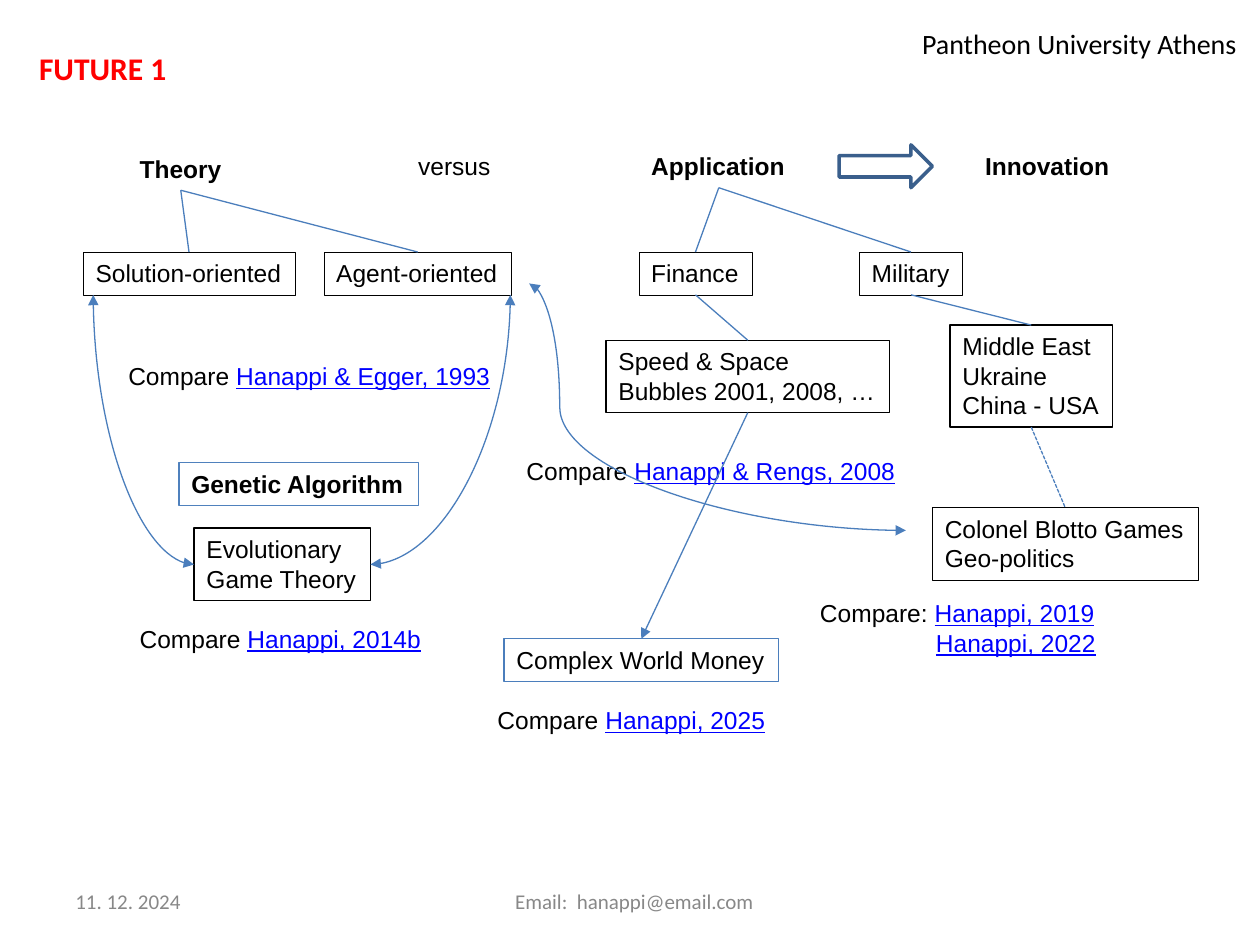
from lxml import etree
from pptx import Presentation
from pptx.dml.color import RGBColor
from pptx.enum.dml import MSO_LINE
from pptx.enum.shapes import MSO_CONNECTOR, MSO_SHAPE
from pptx.enum.text import MSO_ANCHOR, MSO_AUTO_SIZE, PP_ALIGN
from pptx.oxml.ns import qn
from pptx.util import Inches, Pt

STRAIGHT, CURVE = MSO_CONNECTOR.STRAIGHT, MSO_CONNECTOR.CURVE
TOP_SITE, BOTTOM_SITE = 0, 2
COLORS = {"text": "000000", "title": "FF0000", "link": "0000FF", "footer": "888888",
          "line": "4B7EBC", "genetic": "4F81BD", "arrow": "3A5F8C", "white": "FFFFFF"}

# Content: name -> (left, top, width, lines, bold, border color, border width)
NODES = {
    "theory": (1.01, 1.17, 0.85, ["Theory"], True, None, 0),
    "versus": (3.22, 1.15, 0.78, ["versus"], False, None, 0),
    "application": (5.07, 1.15, 1.27, ["Application"], True, None, 0),
    "innovation": (7.72, 1.15, 1.19, ["Innovation"], True, None, 0),
    "solution": (0.66, 2, 1.68, ["Solution-oriented"], False, "text", 0.25),
    "agent": (2.57, 2, 1.49, ["Agent-oriented"], False, "text", 0.25),
    "finance": (5.07, 2, 0.9, ["Finance"], False, "text", 0.25),
    "military": (6.82, 2, 0.82, ["Military"], False, "text", 0.25),
    "bubbles": (4.81, 2.7, 2.25, ["Speed & Space", "Bubbles 2001, 2008, …"],
                False, "text", 0.75),
    "regions": (7.54, 2.58, 1.29, ["Middle East", "Ukraine", "China - USA"],
                False, "text", 0.75),
    "blotto": (7.4, 4.03, 2.11, ["Colonel Blotto Games", "Geo-politics"],
               False, "text", 0.75),
    "evolution": (1.54, 4.19, 1.4, ["Evolutionary", "Game Theory"], False, "text", 0.75),
    "money": (4, 5.07, 2.18, ["Complex World Money"], False, "line", 0.75),
    "genetic": (1.42, 3.67, 1.9, ["Genetic Algorithm"], True, "genetic", 0.75),
}
# left, top, width, lead-in, cited works
REFERENCES = [
    (0.92, 2.82, 3.1, "Compare ", ["Hanappi & Egger, 1993"]),
    (4.08, 3.57, 3.14, "Compare ", ["Hanappi & Rengs, 2008"]),
    (6.41, 4.7, 2.44, "Compare: ", ["Hanappi, 2019", "Hanappi, 2022"]),
    (1.01, 4.9, 2.44, "Compare ", ["Hanappi, 2014b"]),
    (3.85, 5.55, 2.33, "Compare ", ["Hanappi, 2025"]),
]
REFERENCE_INDENT = 0.92
# upper node, lower node
BRANCHES = [("theory", "solution"), ("theory", "agent"), ("application", "finance"),
            ("application", "military"), ("finance", "bubbles"), ("military", "regions"),
            ("regions", "blotto"), ("bubbles", "money")]
DASHED, POINTED = ("regions", "blotto"), ("bubbles", "money")
# Quarter curves that leave downwards: start x, start y, end x, end y
QUARTER_CURVES = [(0.74, 2.34, 1.54, 4.48), (4.05, 2.34, 2.94, 4.48)]


def rgb(color):
    return RGBColor.from_string(COLORS[color])


def add_run(paragraph, text, size=14, color="text", font="Arial", bold=False,
            underline=False):
    run = paragraph.add_run()
    run.text = text
    run.font.size, run.font.name = Pt(size), font
    run.font.bold, run.font.underline = bold, underline
    run.font.color.rgb = rgb(color)


def add_label(left, top, width, line_count):
    """Text box that fits 14 pt lines; returns it with its paragraphs."""
    height = 0.34 + 0.235 * (line_count - 1)
    label = slide.shapes.add_textbox(*map(Inches, (left, top, width, height)))
    frame = label.text_frame
    frame.word_wrap = False
    frame.auto_size = MSO_AUTO_SIZE.SHAPE_TO_FIT_TEXT
    return label, [frame.paragraphs[0]] + [frame.add_paragraph()
                                           for _ in range(line_count - 1)]


def add_line(kind, x1, y1, x2, y2, ends=()):
    line = slide.shapes.add_connector(kind, *map(Inches, (x1, y1, x2, y2)))
    line.line.color.rgb = rgb("line")
    line.line.width = Pt(0.75)
    for end in ends:
        etree.SubElement(line.line._get_or_add_ln(), qn(f"a:{end}"), type="triangle")
    etree.SubElement(line._element.spPr, qn("a:effectLst"))
    return line


def fill_frame(box, text, size, color, bold=False, align=PP_ALIGN.LEFT,
               anchor=MSO_ANCHOR.MIDDLE, inset=0.05):
    frame = box.text_frame
    frame.word_wrap, frame.vertical_anchor = True, anchor
    frame.auto_size = MSO_AUTO_SIZE.NONE
    frame.margin_left = frame.margin_right = Inches(0.1)
    frame.margin_top = frame.margin_bottom = Inches(inset)
    frame.paragraphs[0].alignment = align
    add_run(frame.paragraphs[0], text, size, color, "Calibri", bold)


prs = Presentation()
prs.slide_width, prs.slide_height = Inches(10), Inches(7.5)
slide = prs.slides.add_slide(prs.slide_layouts[5])

# Title, university and footer
title = slide.shapes.title
title.left, title.top, title.width, title.height = map(Inches, (0.21, 0.29, 1.42, 0.49))
fill_frame(title, "FUTURE 1", 18, "title", True, anchor=MSO_ANCHOR.TOP, inset=0.1)
university = slide.shapes.add_textbox(*map(Inches, (7.22, 0.11, 2.72, 0.65)))
fill_frame(university, "Pantheon University Athens", 16, "text",
           anchor=MSO_ANCHOR.TOP, inset=0.1)
date = slide.shapes.add_textbox(*map(Inches, (0.5, 6.95, 2.33, 0.4)))
fill_frame(date, "11. 12. 2024", 12, "footer")
email = slide.shapes.add_textbox(*map(Inches, (3.45, 6.95, 3.17, 0.4)))
fill_frame(email, "Email:  hanappi@email.com", 12, "footer", align=PP_ALIGN.CENTER)

# Headings and boxes
boxes = {}
for name, (left, top, width, lines, bold, border, border_width) in NODES.items():
    boxes[name], paragraphs = add_label(left, top, width, len(lines))
    for paragraph, text in zip(paragraphs, lines):
        add_run(paragraph, text, bold=bold)
    if border:
        boxes[name].line.color.rgb = rgb(border)
        boxes[name].line.width = Pt(border_width)

# Arrow from application to innovation
arrow = slide.shapes.add_shape(MSO_SHAPE.RIGHT_ARROW,
                               *map(Inches, (6.66, 1.15, 0.74, 0.34)))
arrow.shadow.inherit = False
arrow.fill.solid()
arrow.fill.fore_color.rgb = rgb("white")
arrow.line.color.rgb = rgb("arrow")
arrow.line.width = Pt(2)

# References, with further works lined up under the first
for left, top, width, lead, works in REFERENCES:
    _, paragraphs = add_label(left, top, width, len(works))
    add_run(paragraphs[0], lead)
    for paragraph, work in zip(paragraphs, works):
        add_run(paragraph, work, color="link", underline=True)
    for paragraph in paragraphs[1:]:
        paragraph._p.get_or_add_pPr().set("marL", str(Inches(REFERENCE_INDENT)))

# Straight branches
for branch in BRANCHES:
    upper, lower = (boxes[name] for name in branch)
    line = add_line(STRAIGHT, 0, 0, 1, 1, ["tailEnd"] if branch == POINTED else [])
    line.begin_connect(upper, BOTTOM_SITE)
    line.end_connect(lower, TOP_SITE)
    if branch == DASHED:
        line.line.dash_style = MSO_LINE.SQUARE_DOT

# Curves with arrowheads at both ends
BOTH_ENDS = ("headEnd", "tailEnd")
for x1, y1, x2, y2 in QUARTER_CURVES:
    mid_x, mid_y = (x1 + x2) / 2, (y1 + y2) / 2
    half_w, half_h = (y2 - y1) / 2, abs(x2 - x1) / 2
    curve = add_line(CURVE, mid_x - half_w, mid_y - half_h,
                     mid_x + half_w, mid_y + half_h, BOTH_ENDS)
    properties = curve._element.spPr
    properties.find(qn("a:prstGeom")).set("prst", "curvedConnector2")
    rightwards = x2 > x1
    transform = properties.find(qn("a:xfrm"))
    transform.set("rot", str((270 if rightwards else 90) * 60000))
    if rightwards:
        transform.set("flipH", "1")

agent_curve = add_line(CURVE, 4.2, 2.25, 7.19, 4.21, BOTH_ENDS)
adjustments = agent_curve._element.spPr.find(qn("a:prstGeom")).find(qn("a:avLst"))
etree.SubElement(adjustments, qn("a:gd"), name="adj1", fmla="val 8100")

prs.save("out.pptx")
